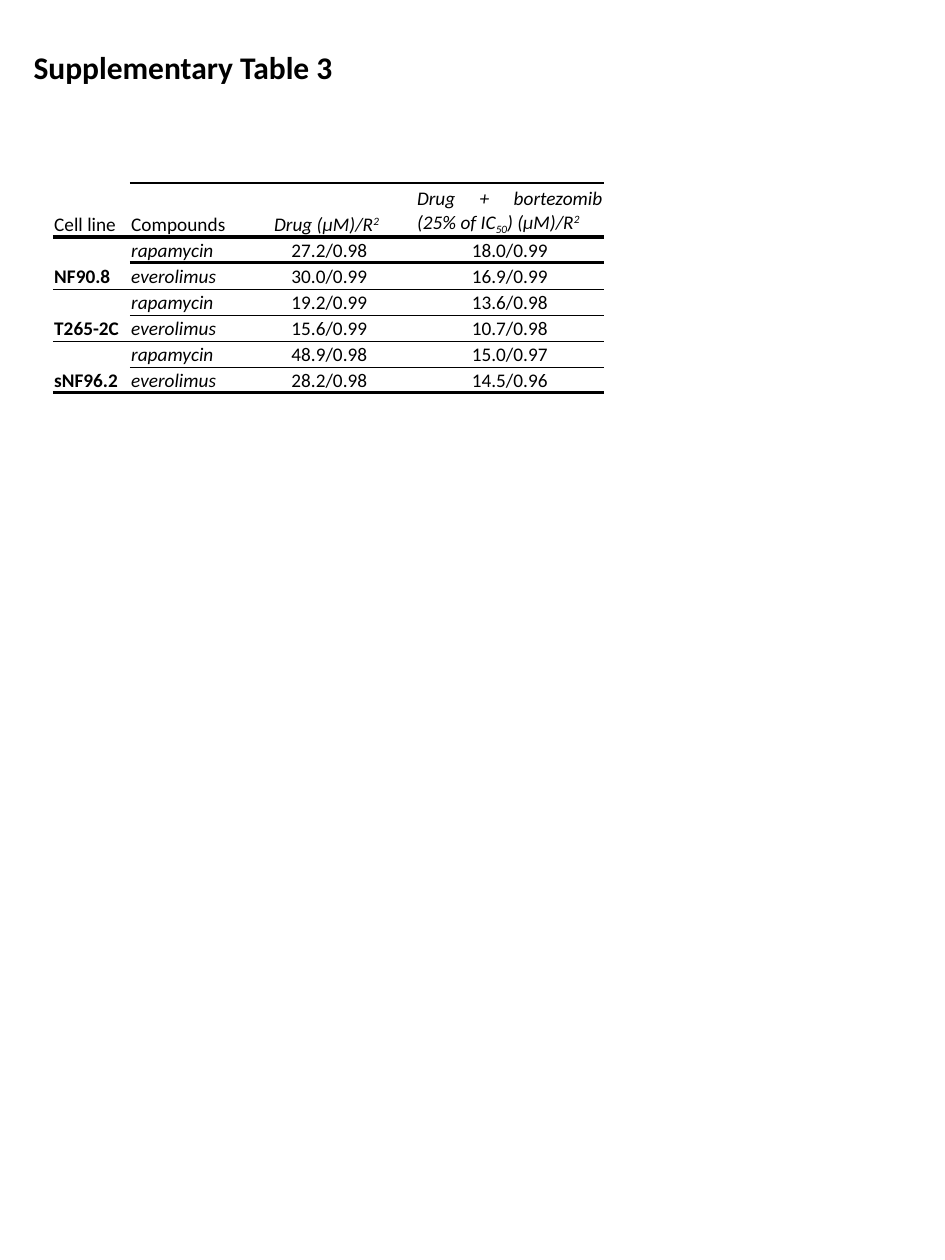
"""Build a one-slide supplementary table of drug responses per cell line."""
from dataclasses import dataclass

from lxml import etree
from pptx import Presentation
from pptx import util as u
from pptx.dml.color import RGBColor
from pptx.enum import text
from pptx.oxml.ns import qn

TITLE = "Supplementary Table 3"
SUP, SUB = 30, -25
DRUG = [("Drug (µM)/R", 0), ("2", SUP)]
COMBINED = [("Drug + bortezomib (25% of IC", 0), ("50", SUB), (") (µM)/R", 0), ("2", SUP)]
RESULTS = {
    "NF90.8": [("rapamycin", "27.2/0.98", "18.0/0.99"), ("everolimus", "30.0/0.99", "16.9/0.99")],
    "T265-2C": [("rapamycin", "19.2/0.99", "13.6/0.98"), ("everolimus", "15.6/0.99", "10.7/0.98")],
    "sNF96.2": [("rapamycin", "48.9/0.98", "15.0/0.97"), ("everolimus", "28.2/0.98", "14.5/0.96")],
}
LINE, COMPOUND, SINGLE, COMBO = 0, 1, 3, 5
HEADER, FIRST = 1, 2
COLS = [77, 113, 30, 113, 30, 188]
ROWS = [26, 54] + [26] * 6
RULES = {0: 1, 1: 2, 3: 0.5, 5: 0.5, 7: 2}
NO_STYLE = "{2D5ABB26-0587-4C30-8999-92F81FD0307C}"


@dataclass(frozen=True)
class Theme:
    font: str = "Calibri"
    ink: str = "000000"
    title: int = 18
    body: int = 11


THEME = Theme()


def px(n):
    return u.Emu(n * 914400 // 126)


def style(font, size, bold=False, italic=False):
    font.name, font.size, font.bold, font.italic = THEME.font, u.Pt(size), bold, italic
    font.color.rgb = RGBColor.from_string(THEME.ink)


def write(cell, runs, align=text.PP_ALIGN.LEFT, bold=False, italic=False):
    p = cell.text_frame.paragraphs[0]
    p.alignment = align
    style(p.font, THEME.body, bold, italic)
    for content, baseline in runs:
        r = p.add_run()
        r.text = content
        if baseline:
            r.font._element.set("baseline", str(baseline * 1000))


def border(cell, side, points):
    ln = etree.SubElement(cell._tc.get_or_add_tcPr(), qn(f"a:ln{side}"), w=str(u.Pt(points)))
    fill = etree.SubElement(ln, qn("a:solidFill"))
    etree.SubElement(fill, qn("a:srgbClr"), val=THEME.ink)


def finish(cell, r, c):
    cell.vertical_anchor = text.MSO_ANCHOR.BOTTOM
    cell.margin_left = cell.margin_right = cell.margin_top = u.Inches(0.01)
    cell.margin_bottom = 0
    end = cell.text_frame.paragraphs[0]._p.get_or_add_endParaRPr()
    end.set("sz", str(THEME.body * 100))
    last = r + cell.span_height - 1 if cell.is_merge_origin else r
    for side, row in (("T", r - 1), ("B", last)):
        if row in RULES and (row, c) != (0, LINE):
            border(cell, side, RULES[row])
    cell.fill.background()


def add_title(s):
    sp = s.shapes.title
    sp.left, sp.top, sp.width, sp.height = px(21), px(42), px(410), px(50)
    tf = sp.text_frame
    tf.text = TITLE
    tf.word_wrap = True
    tf.auto_size = text.MSO_AUTO_SIZE.SHAPE_TO_FIT_TEXT
    tf.vertical_anchor = text.MSO_ANCHOR.TOP
    p = tf.paragraphs[0]
    p.alignment = text.PP_ALIGN.LEFT
    style(p.font, THEME.title, bold=True)


def add_results(s):
    frame = s.shapes.add_table(len(ROWS), len(COLS), px(53), px(157), px(sum(COLS)), px(sum(ROWS)))
    table = frame.table
    table.first_row = table.horz_banding = False
    table._tbl.tblPr.find(qn("a:tableStyleId")).text = NO_STYLE
    for column, width in zip(table.columns, COLS):
        column.width = px(width)
    for row, height in zip(table.rows, ROWS):
        row.height = px(height)

    justify, center = text.PP_ALIGN.JUSTIFY, text.PP_ALIGN.CENTER
    write(table.cell(HEADER, LINE), [("Cell line", 0)])
    write(table.cell(HEADER, COMPOUND), [("Compounds", 0)], justify)
    write(table.cell(HEADER, SINGLE), DRUG, italic=True)
    write(table.cell(HEADER, COMBO), COMBINED, justify, italic=True)

    r = FIRST
    for cell_line, tests in RESULTS.items():
        label = table.cell(r, LINE)
        label.merge(table.cell(r + len(tests) - 1, LINE))
        write(label, [(cell_line, 0)], bold=True)
        for compound, single, combo in tests:
            write(table.cell(r, COMPOUND), [(compound, 0)], italic=True)
            write(table.cell(r, SINGLE), [(single, 0)], center)
            write(table.cell(r, COMBO), [(combo, 0)], center)
            r += 1

    for r in range(len(ROWS)):
        for c in range(len(COLS)):
            finish(table.cell(r, c), r, c)


def main():
    prs = Presentation()
    prs.slide_width, prs.slide_height = u.Inches(7.5), u.Inches(10)
    s = prs.slides.add_slide(prs.slide_layouts[5])
    add_title(s)
    add_results(s)
    prs.save("out.pptx")


if __name__ == "__main__":
    main()
